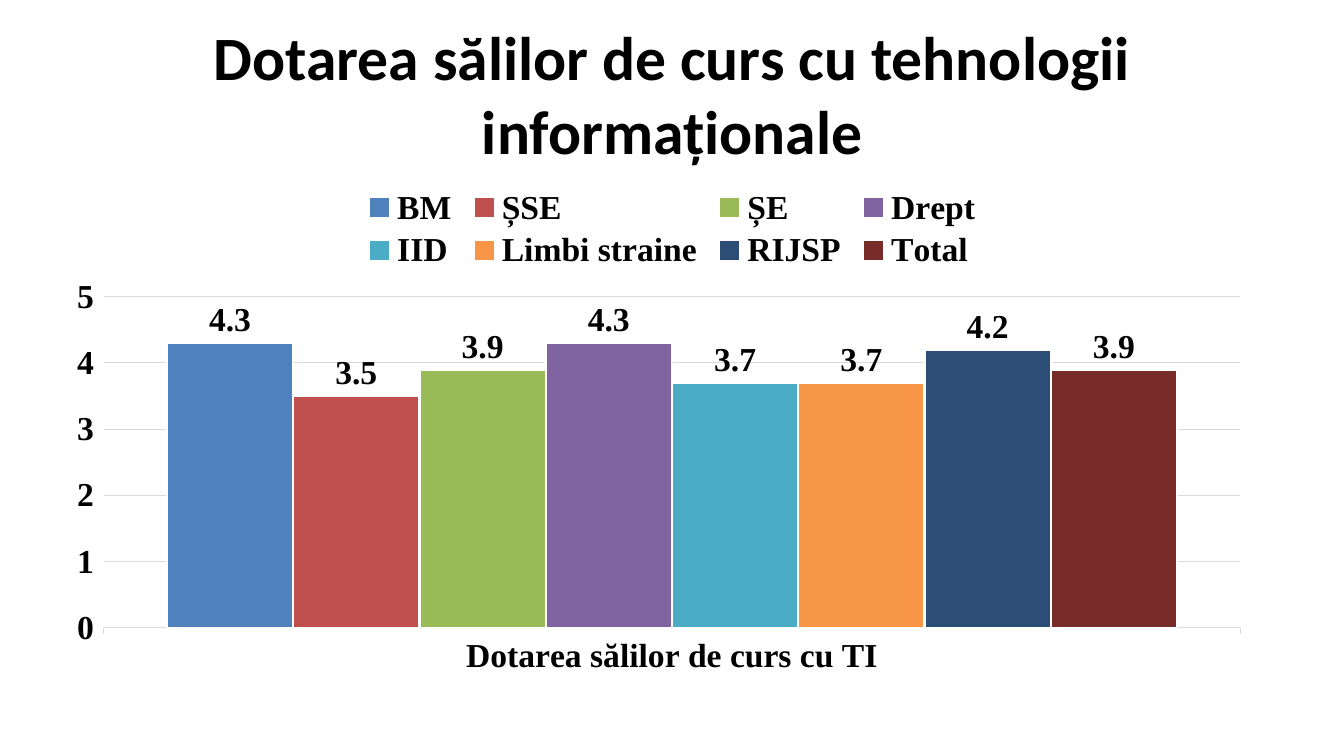
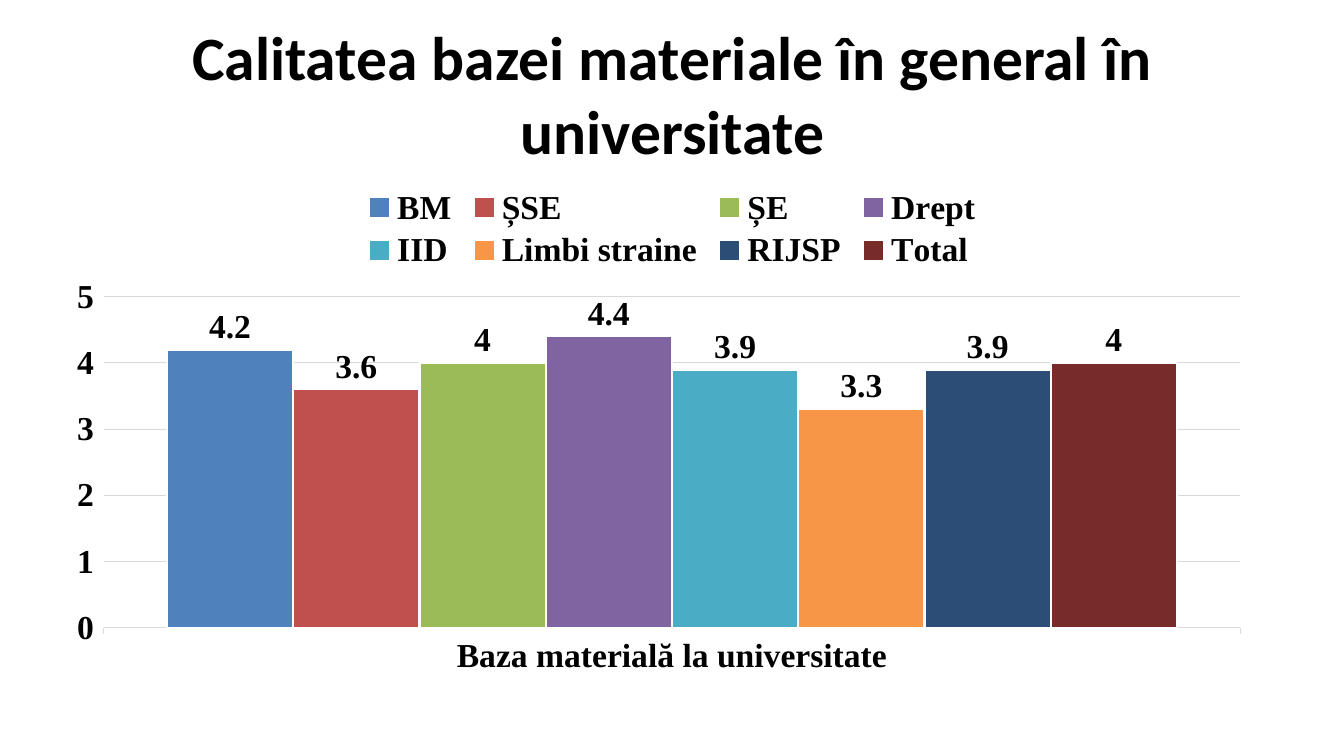
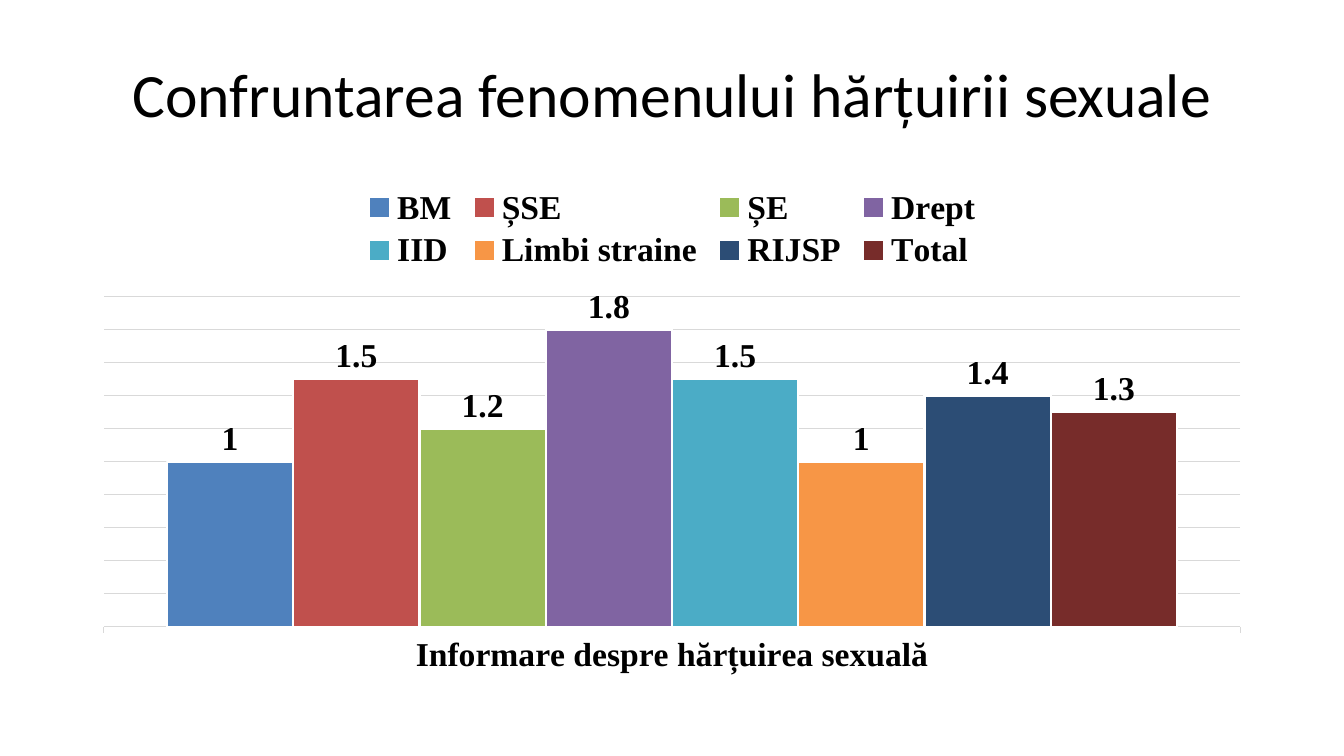
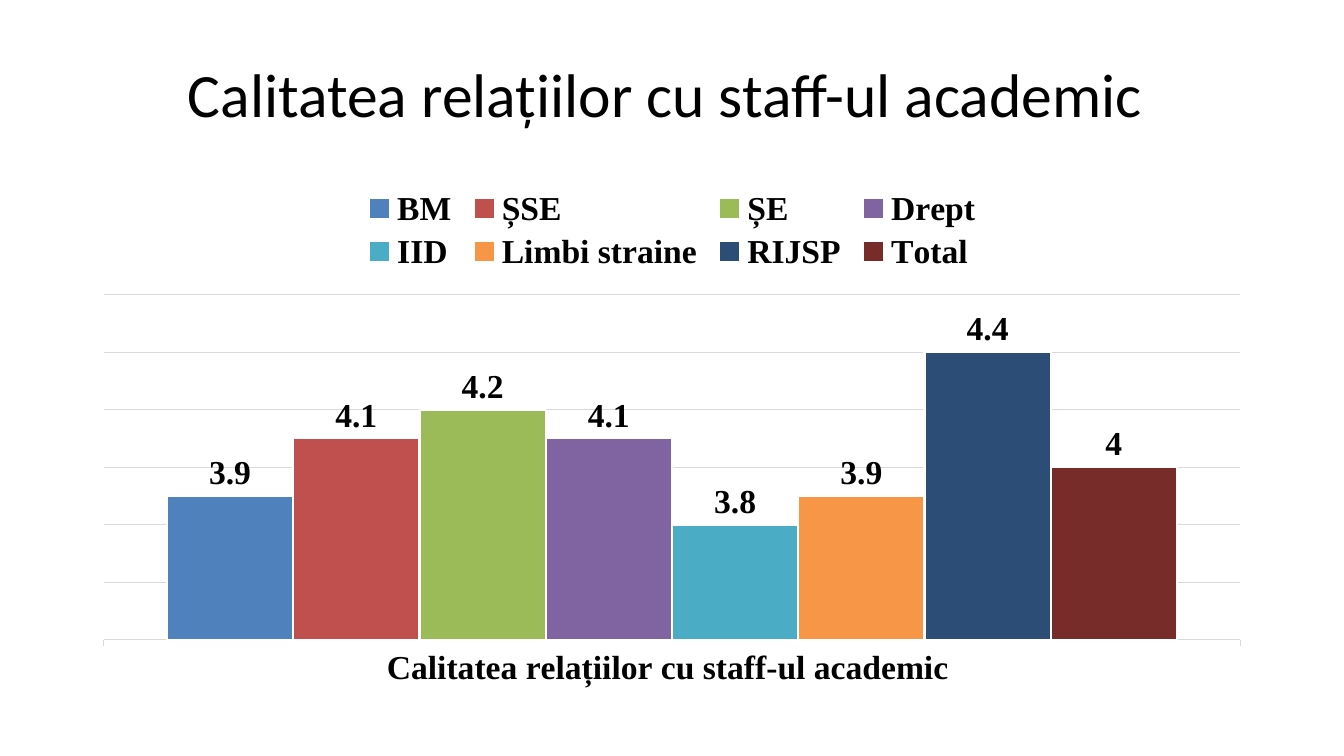
from lxml import etree
from pptx import Presentation
from pptx import util as u
from pptx.chart.data import CategoryChartData
from pptx.dml.color import RGBColor
from pptx.enum import chart as ch, text
from pptx.oxml.ns import qn

PX = 9144
SERIES = [
    ("BM", "4F81BD"), ("ȘSE", "C0504D"), ("ȘE", "9BBB59"), ("Drept", "8064A2"),
    ("IID", "4BACC6"), ("Limbi straine", "F79646"), ("RIJSP", "2C4D75"), ("Total", "772C2A"),
]
TITLE_BOX = (67, 30, 1200, 125)
CHART_LEFT, CHART_TOP, CHART_W = 67, 175, 1200
LEGEND_LEFT, LEGEND_TOP, LEGEND_W, LEGEND_SHARE = 288, 8, 624, 0.18
PLOT_LEFT, PLOT_W = 36, 1127
TITLE_FONT = dict(name="Calibri", size=u.Pt(44))
CHART_FONT = dict(name="Times New Roman", size=u.Pt(24), bold=True)
BLACK, WHITE, GREY = "000000", "FFFFFF", "D9D9D9"

SLIDES = [
    dict(title="Dotarea sălilor de curs cu tehnologii informaționale", bold=True,
         category="Dotarea sălilor de curs cu TI",
         values=[4.3, 3.5, 3.9, 4.3, 3.7, 3.7, 4.2, 3.9],
         scale=(0, 5, 1), axis=True, height=495, plot=(120, 330)),
    dict(title="Calitatea bazei materiale în general în universitate", bold=True,
         category="Baza materială la universitate",
         values=[4.2, 3.6, 4, 4.4, 3.9, 3.3, 3.9, 4],
         scale=(0, 5, 1), axis=True, height=495, plot=(120, 330)),
    dict(title="Confruntarea fenomenului hărțuirii sexuale", bold=False,
         category="Informare despre hărțuirea sexuală",
         values=[1, 1.5, 1.2, 1.8, 1.5, 1, 1.4, 1.3],
         scale=(0, 2, 0.2), axis=False, height=495, plot=(120, 330)),
    dict(title="Calitatea relațiilor cu staff-ul academic ", bold=False,
         category="Calitatea relațiilor cu staff-ul academic ",
         values=[3.9, 4.1, 4.2, 4.1, 3.8, 3.9, 4.4, 4],
         scale=(3.4, 4.6, 0.2), axis=False, height=508, plot=(118, 344)),
]


def rgb(value):
    return RGBColor.from_string(value)


def emu(*lengths):
    return [u.Emu(n * PX) for n in lengths]


def set_all(obj, values):
    for key, value in values.items():
        setattr(obj, key, value)


def set_font(font, values):
    set_all(font, values)
    font.color.rgb = rgb(BLACK)


def set_line(line, color, width):
    line.color.rgb = rgb(color)
    line.width = u.Pt(width)


def set_layout(parent, index, box, chart_h, inner=False):
    for old in parent.findall(qn("c:layout")):
        parent.remove(old)
    layout = etree.Element(qn("c:layout"))
    manual = etree.SubElement(layout, qn("c:manualLayout"))
    items = [("layoutTarget", "inner")] if inner else []
    items += [("xMode", "edge"), ("yMode", "edge")]
    wholes = (CHART_W, chart_h, CHART_W, chart_h)
    items += [(key, f"{n / whole:.4f}") for key, n, whole in zip("xywh", box, wholes)]
    for tag, value in items:
        etree.SubElement(manual, qn(f"c:{tag}")).set("val", value)
    parent.insert(index, layout)


def add_title(s, title, bold):
    tf = s.shapes.add_textbox(*emu(*TITLE_BOX)).text_frame
    set_all(tf, dict(word_wrap=True, vertical_anchor=text.MSO_ANCHOR.MIDDLE))
    p = tf.paragraphs[0]
    p.alignment = text.PP_ALIGN.CENTER
    r = p.add_run()
    r.text = title
    set_font(r.font, dict(TITLE_FONT, bold=bold))


def add_column_chart(s, item):
    data = CategoryChartData()
    data.categories = [item["category"]]
    for (name, _), value in zip(SERIES, item["values"]):
        data.add_series(name, [value])
    chart_h = item["height"]
    box = emu(CHART_LEFT, CHART_TOP, CHART_W, chart_h)
    chart = s.shapes.add_chart(ch.XL_CHART_TYPE.COLUMN_CLUSTERED, *box, data).chart
    set_all(chart, dict(has_title=False, has_legend=True))
    set_font(chart.font, CHART_FONT)

    legend = chart.legend
    set_all(legend, dict(position=ch.XL_LEGEND_POSITION.TOP, include_in_layout=False))
    set_font(legend.font, CHART_FONT)
    legend_box = (LEGEND_LEFT, LEGEND_TOP, LEGEND_W, LEGEND_SHARE * chart_h)
    set_layout(legend._element, 1, legend_box, chart_h)

    top, height = item["plot"]
    plot_box = (PLOT_LEFT, top, PLOT_W, height)
    set_layout(chart._chartSpace.chart.plotArea, 0, plot_box, chart_h, inner=True)

    plot = chart.plots[0]
    set_all(plot, dict(gap_width=100, overlap=0, vary_by_categories=False))
    for series, (_, color) in zip(plot.series, SERIES):
        series.format.fill.solid()
        series.format.fill.fore_color.rgb = rgb(color)
        set_line(series.format.line, WHITE, 1.5)
        labels = series.data_labels
        set_all(labels, dict(show_value=True, position=ch.XL_LABEL_POSITION.OUTSIDE_END))
        set_font(labels.font, CHART_FONT)

    low, high, step = item["scale"]
    values, cats = chart.value_axis, chart.category_axis
    set_all(values, dict(minimum_scale=low, maximum_scale=high, major_unit=step,
                         has_major_gridlines=True, visible=item["axis"]))
    set_line(values.major_gridlines.format.line, GREY, 0.75)
    values.format.line.fill.background()
    set_line(cats.format.line, GREY, 0.75)
    for axis in (values, cats):
        axis.major_tick_mark = ch.XL_TICK_MARK.OUTSIDE
        set_font(axis.tick_labels.font, CHART_FONT)


def main():
    prs = Presentation()
    prs.slide_width, prs.slide_height = emu(1333, 750)
    for item in SLIDES:
        s = prs.slides.add_slide(prs.slide_layouts[6])
        add_title(s, item["title"], item["bold"])
        add_column_chart(s, item)
    prs.save("out.pptx")


if __name__ == "__main__":
    main()
